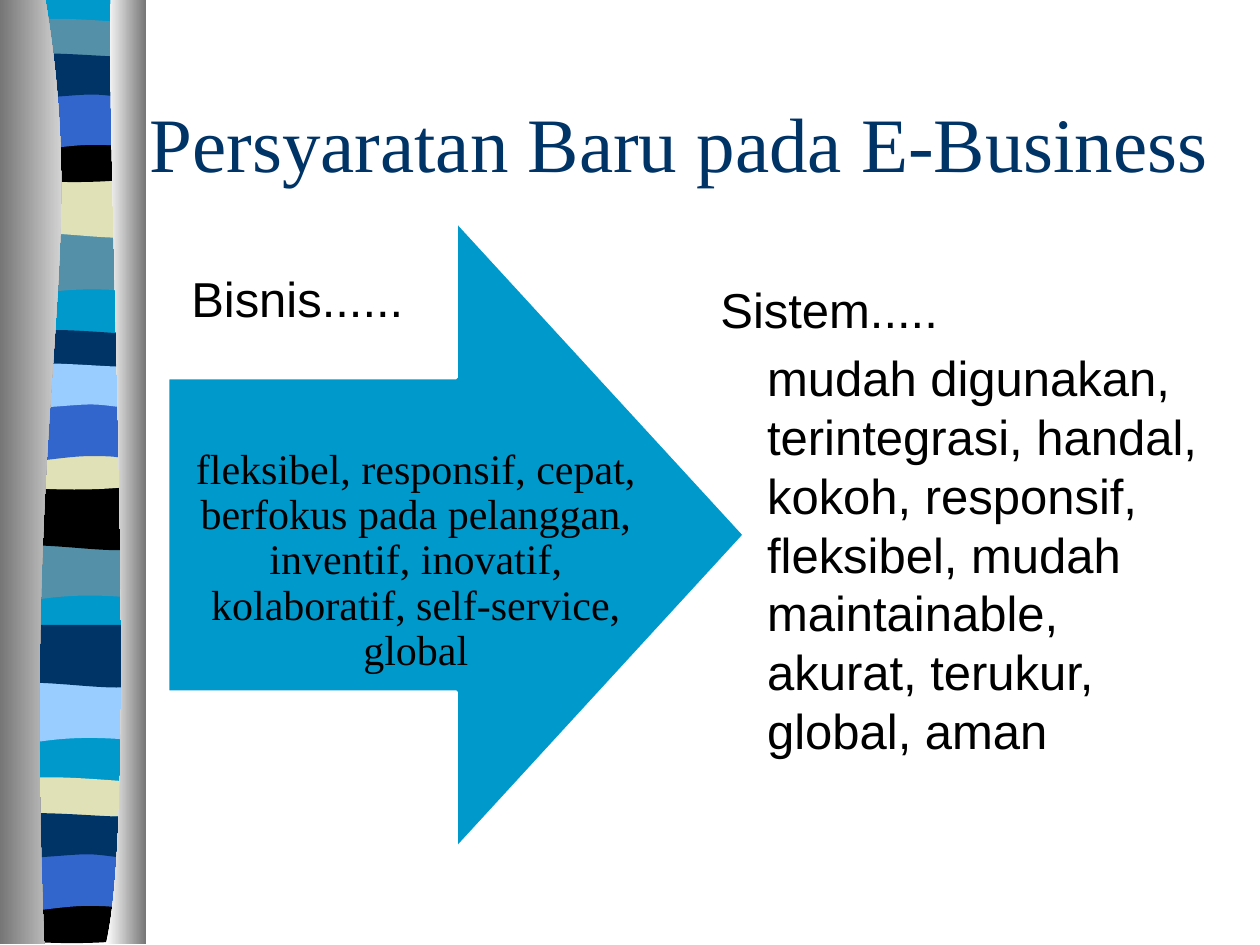
import dataclasses

import lxml.etree
import pptx
import pptx.dml.color
import pptx.enum.shapes
import pptx.enum.text
import pptx.oxml.ns
import pptx.util

Inches = pptx.util.Inches
Pt = pptx.util.Pt
Align = pptx.enum.text.PP_ALIGN
Anchor = pptx.enum.text.MSO_ANCHOR
qualified = pptx.oxml.ns.qn


def rgb(value):
    return pptx.dml.color.RGBColor.from_string(value)


@dataclasses.dataclass(frozen=True)
class Theme:
    white: str = "FFFFFF"
    black: str = "000000"
    navy: str = "003366"
    cyan: str = "0099CC"
    blue: str = "3366CC"
    sky: str = "99CCFF"
    teal: str = "5490A8"
    sand: str = "E1E1B7"
    silver: str = "767676"
    serif: str = "Times New Roman"
    sans: str = "Arial"
    title_size: int = 44
    body_size: int = 28
    arrow_size: int = 24


WAVES = {
    "tide": [(1.08, 0), (1.08, 0.47), (0.33, 0.39, 0.18, 0.55, 0, 0.47), (0, 0)],
    "swell": [(1.08, 0), (1.08, 0.47), (0.9, 0.55, 0.33, 0.42, 0, 0.47), (0, 0)],
    "lens": [(1.08, 0.04), (1.08, 0.29), (0.9, 0.33, 0.18, 0.33, 0, 0.29), (0, 0.04),
             (0.07, 0, 0.23, 0, 0.41, 0), (0.59, 0, 0.94, 0.03, 1.08, 0.04)],
    "bowl": [(1.08, 0), (1.08, 0.32), (0.9, 0.38, 0.18, 0.38, 0, 0.32), (0, 0),
             (0.67, 0.05, 0.86, 0, 1.08, 0)],
    "arch": [(1.08, 0), (1.08, 0.48), (0.91, 0.42, 0.84, 0.42, 0.66, 0.42),
             (0.48, 0.42, 0.16, 0.48, 0, 0.48), (0, 0)],
    "ripple": [(1.08, 0.06), (1.08, 0.36), (1.01, 0.42, 0.85, 0.36, 0.67, 0.36),
               (0.49, 0.36, 0.11, 0.42, 0, 0.36), (0, 0.06),
               (0.15, 0, 0.74, 0.06, 0.92, 0.06), (1.1, 0.06, 1.05, 0.06, 1.08, 0.06)],
}

BANDS = [
    ("tide", 0.05, 1.85, "teal"), ("swell", 0.07, 1.39, "sand"),
    ("lens", 0.07, 0.15, "teal"), ("bowl", 0.05, 1.08, "black"),
    ("arch", 0.06, 0.73, "blue"), ("ripple", 0.06, 0.39, "navy"),
    ("tide", 0.03, 4.28, "teal"), ("swell", 0.05, 3.87, "black"),
    ("lens", 0.05, 2.62, "navy"), ("bowl", 0.05, 3.52, "sand"),
    ("arch", 0.05, 3.2, "blue"), ("ripple", 0.05, 2.85, "sky"),
    ("tide", 0.03, 5.41, "sky"), ("swell", 0.04, 4.96, "navy"),
    ("lens", 0.03, 6.17, "sand"), ("bowl", 0.03, 7.12, "black"),
    ("arch", 0.02, 6.77, "blue"), ("ripple", 0.02, 6.42, "navy"),
]

LEFT_CURTAIN = [(0.36, 0), (0.72, 2.16, 0.17, 2.96, 0.35, 7.49), (0, 7.49), (0, 0)]
RIGHT_CURTAIN = [(0.88, 0), (0.84, 1.25, 1.11, 6.46, 0.84, 7.49), (1.16, 7.49), (1.16, 0)]


class SlideBuilder:
    def __init__(self, slide, theme):
        self.slide = slide
        self.theme = theme

    def paint(self, shape, color):
        shape.shadow.inherit = False
        shape.fill.solid()
        shape.fill.fore_color.rgb = rgb(color)
        shape.line.fill.background()
        return shape

    def preset(self, kind, left, top, width, height, color):
        shape = self.slide.shapes.add_shape(
            kind, Inches(left), Inches(top), Inches(width), Inches(height))
        return self.paint(shape, color)

    def outline(self, segments, color, left=0, top=0):
        points = [(Inches(left + x), Inches(top + y))
                  for segment in segments for x, y in zip(segment[::2], segment[1::2])]
        builder = self.slide.shapes.build_freeform(*points[0], scale=1.0)
        builder.add_line_segments(points[1:], close=True)
        shape = builder.convert_to_shape()
        lines = iter(list(shape._element.iter(qualified("a:lnTo"))))
        for segment in segments[1:]:
            group = [next(lines) for _ in segment[::2]]
            if len(group) == 3:
                curve = lxml.etree.Element(qualified("a:cubicBezTo"))
                group[0].addprevious(curve)
                for line in group:
                    curve.append(line[0])
                    line.getparent().remove(line)
        return self.paint(shape, color)

    def curtain(self, segments, start, end):
        shape = self.outline(segments, start)
        shape.fill.gradient()
        shape.fill.gradient_angle = 0
        for stop, color, position in zip(shape.fill.gradient_stops, (start, end), (0, 1)):
            stop.color.rgb = rgb(color)
            stop.position = position

    def text(self, left, top, width, height, paragraphs, font, frame_format=None):
        box = self.slide.shapes.add_textbox(
            Inches(left), Inches(top), Inches(width), Inches(height))
        frame = box.text_frame
        for name, value in {"word_wrap": True, **(frame_format or {})}.items():
            setattr(frame, name, value)
        name, size, color = font
        for index, (words, indent, para_format) in enumerate(paragraphs):
            para = frame.add_paragraph() if index else frame.paragraphs[0]
            if indent:
                para._p.get_or_add_pPr().set("marL", str(Inches(indent)))
            for key, value in para_format.items():
                setattr(para, key, value)
            span = para.add_run()
            span.text = words
            for key, value in {"name": name, "size": Pt(size)}.items():
                setattr(span.font, key, value)
            span.font.color.rgb = rgb(color)


def main():
    theme = Theme()
    deck = pptx.Presentation()
    deck.slide_width, deck.slide_height = Inches(10), Inches(7.5)
    page = SlideBuilder(deck.slides.add_slide(deck.slide_layouts[6]), theme)
    shapes = pptx.enum.shapes.MSO_SHAPE

    page.outline([(1.14, 0), (1.14, 7.47), (0.06, 7.47), (0.06, 0)], theme.cyan)
    for wave, left, top, color in BANDS:
        page.outline(WAVES[wave], getattr(theme, color), left, top)
    page.curtain(LEFT_CURTAIN, theme.silver, theme.white)
    page.curtain(RIGHT_CURTAIN, theme.white, theme.silver)

    arrow = page.preset(shapes.RIGHT_ARROW, 1.33, 1.75, 4.58, 4.99, theme.cyan)
    arrow.line.color.rgb = rgb(theme.white)
    arrow.line.width = Pt(2)
    page.text(
        1.42, 2.23, 3.76, 4.84,
        [("fleksibel, responsif, cepat, berfokus pada pelanggan, inventif, inovatif, "
          "kolaboratif, self-service, global", 0,
          {"alignment": Align.CENTER, "line_spacing": 0.9})],
        (theme.serif, theme.arrow_size, theme.black),
        {"vertical_anchor": Anchor.MIDDLE, "margin_left": 0, "margin_right": 0,
         "margin_top": Inches(0.27), "margin_bottom": Inches(0.66)})

    page.text(1.09, 0.5, 8.7, 1.25, [("Persyaratan Baru pada E-Business", 0, {})],
              (theme.serif, theme.title_size, theme.navy), {"vertical_anchor": Anchor.MIDDLE})
    body = (theme.sans, theme.body_size, theme.black)
    page.text(1.42, 2.08, 4.17, 4.5, [("Bisnis......", 0, {})], body)
    page.text(
        5.62, 2.17, 4.17, 4.5,
        [("Sistem.....", 0, {}),
         ("mudah digunakan, terintegrasi, handal, kokoh, responsif, fleksibel, mudah "
          "maintainable, akurat, terukur, global, aman", 0.37, {"space_before": Pt(5.2)})],
        body)
    deck.save("out.pptx")


if __name__ == "__main__":
    main()
